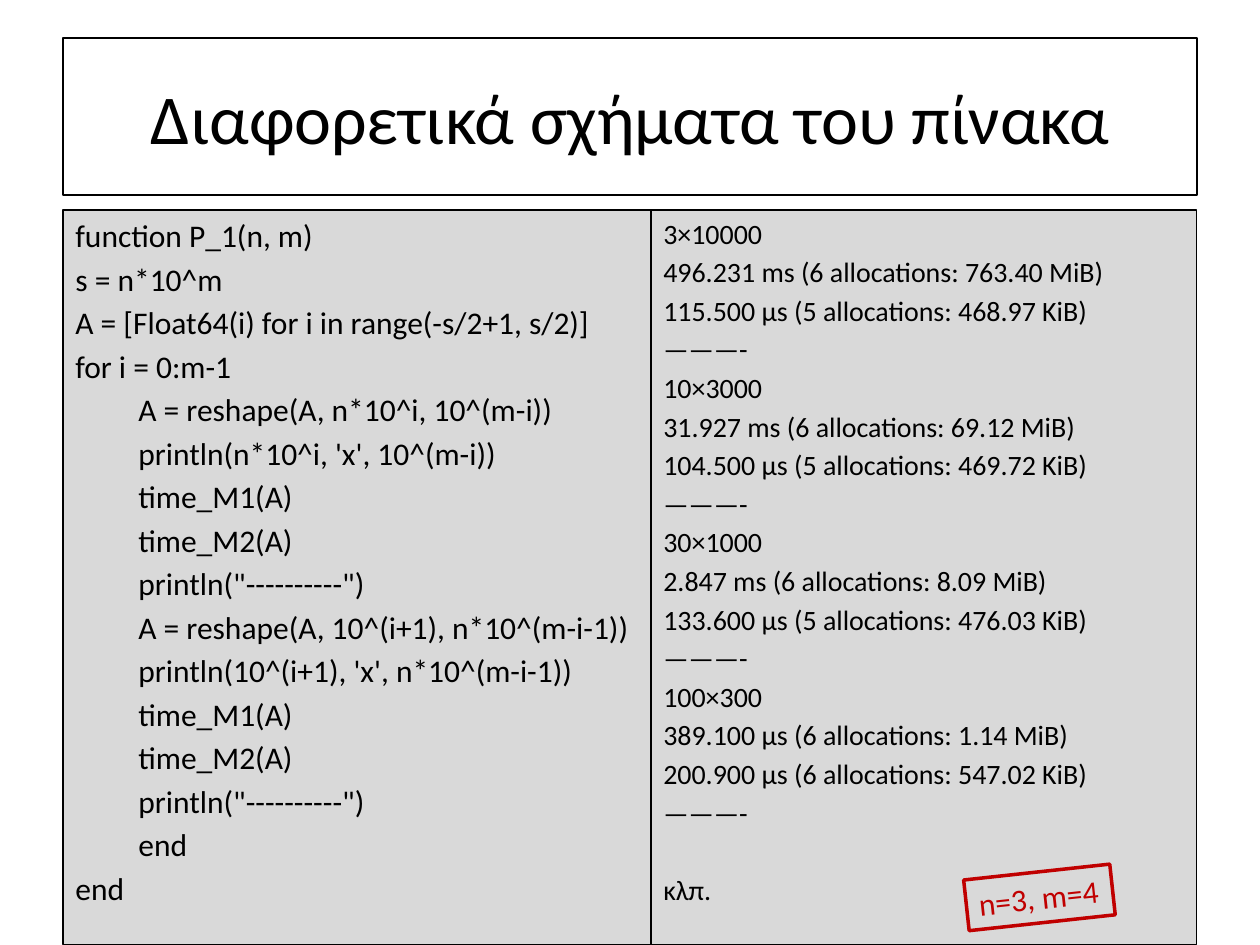
from pptx import Presentation
from pptx.dml.color import RGBColor
from pptx.enum.text import MSO_ANCHOR, MSO_AUTO_SIZE, PP_ALIGN
from pptx.util import Pt

PX = 914400 // 126
FONT = "Calibri"
BLACK, GREY, RED = "000000", "D9D9D9", "C00000"


def rgb(value):
    return RGBColor.from_string(value)


def write(sp, lines, size, color=BLACK, fill=None, border=0.75, gap=0,
          align=PP_ALIGN.LEFT, anchor=MSO_ANCHOR.TOP, wrap=True):
    """Fill a shape with (text, left indent px, extra space before pt) lines."""
    if fill:
        sp.fill.solid()
        sp.fill.fore_color.rgb = rgb(fill)
    sp.line.color.rgb = rgb(color)
    sp.line.width = Pt(border)
    tf = sp.text_frame
    tf.auto_size = MSO_AUTO_SIZE.NONE
    tf.word_wrap = wrap
    tf.vertical_anchor = anchor
    for i, (text, indent, extra) in enumerate(lines):
        p = tf.add_paragraph() if i else tf.paragraphs[0]
        p.alignment = align
        if i:
            p.space_before = Pt(gap + extra)
        if indent:
            p._p.get_or_add_pPr().set("marL", str(indent * PX))
        r = p.add_run()
        r.text = text
        r.font.name = FONT
        r.font.size = Pt(size)
        r.font.color.rgb = rgb(color)


prs = Presentation()
prs.slide_width, prs.slide_height = 1260 * PX, 945 * PX
s = prs.slides.add_slide(prs.slide_layouts[5])

title = s.shapes.title
title.left, title.top, title.width, title.height = 63 * PX, 38 * PX, 1134 * PX, 157 * PX
write(title, [("Διαφορετικά σχήματα του πίνακα", 0, 0)], 40,
      align=PP_ALIGN.CENTER, anchor=MSO_ANCHOR.MIDDLE)

# Code on the left: the loop body is indented
opening = [
    "function P_1(n, m)",
    "s = n*10^m",
    "A = [Float64(i) for i in range(-s/2+1, s/2)]",
    "for i = 0:m-1",
]
loop = []
for rows, cols in (("n*10^i", "10^(m-i)"), ("10^(i+1)", "n*10^(m-i-1)")):
    loop += [
        f"A = reshape(A, {rows}, {cols})",
        f"println({rows}, 'x', {cols})",
        "time_M1(A)",
        "time_M2(A)",
        'println("----------")',
    ]
loop.append("end")
code = [(t, 0, 0) for t in opening] + [(t, 63, 0) for t in loop] + [("end", 0, 0)]
sp = s.shapes.add_textbox(63 * PX, 210 * PX, 588 * PX, 735 * PX)
write(sp, code, 18, fill=GREY, gap=3.25)

# Timings on the right, one group per matrix shape
timings = [
    ("3×10000", "496.231 ms (6 allocations: 763.40 MiB)",
     "115.500 μs (5 allocations: 468.97 KiB)"),
    ("10×3000", "31.927 ms (6 allocations: 69.12 MiB)",
     "104.500 μs (5 allocations: 469.72 KiB)"),
    ("30×1000", "2.847 ms (6 allocations: 8.09 MiB)",
     "133.600 μs (5 allocations: 476.03 KiB)"),
    ("100×300", "389.100 μs (6 allocations: 1.14 MiB)",
     "200.900 μs (6 allocations: 547.02 KiB)"),
]
results = [(t, 0, 0) for group in timings for t in (*group, "———-")]
results.append(("κλπ.", 0, 22.4))
sp = s.shapes.add_textbox(651 * PX, 210 * PX, 546 * PX, 735 * PX)
write(sp, results, 16, fill=GREY, gap=2.85)

stamp = s.shapes.add_textbox(966 * PX, 872 * PX, 147 * PX, 51 * PX)
stamp.rotation = -6.2
write(stamp, [("n=3, m=4", 0, 0)], 18, color=RED, border=2, wrap=False)

prs.save("out.pptx")
